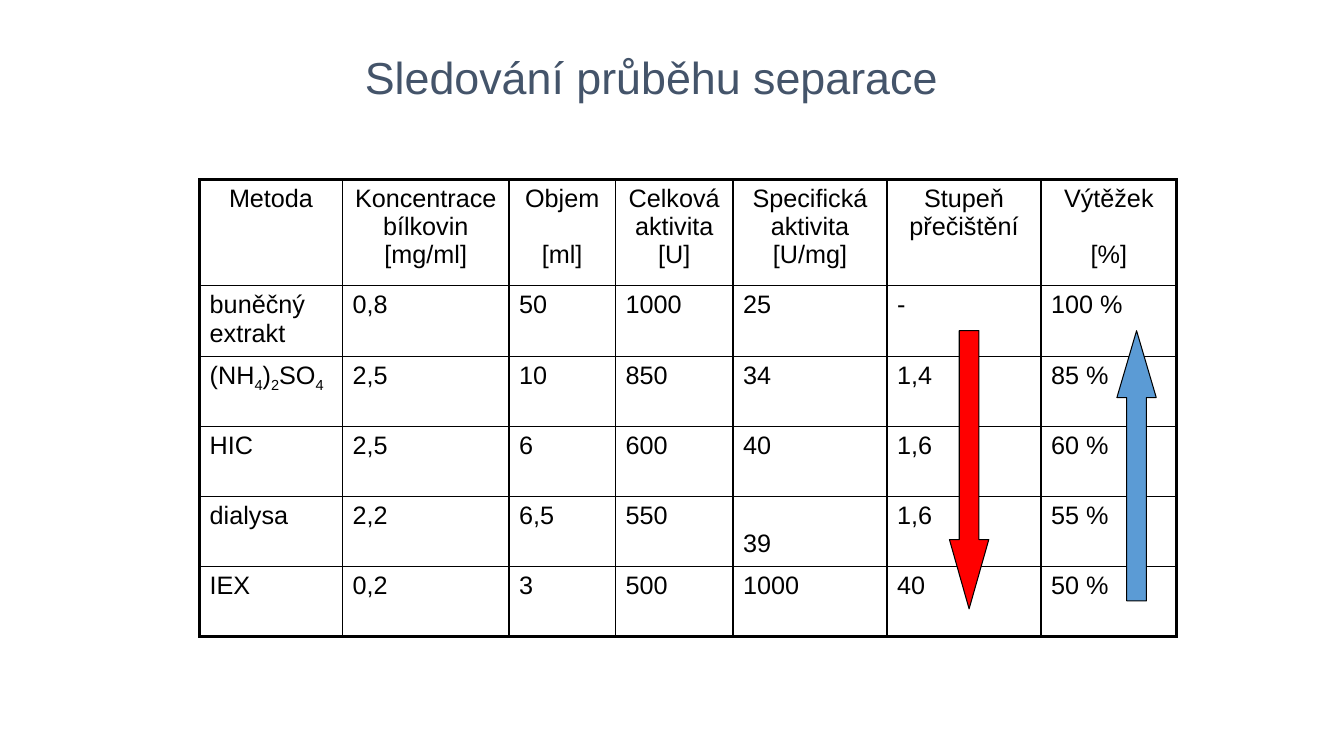
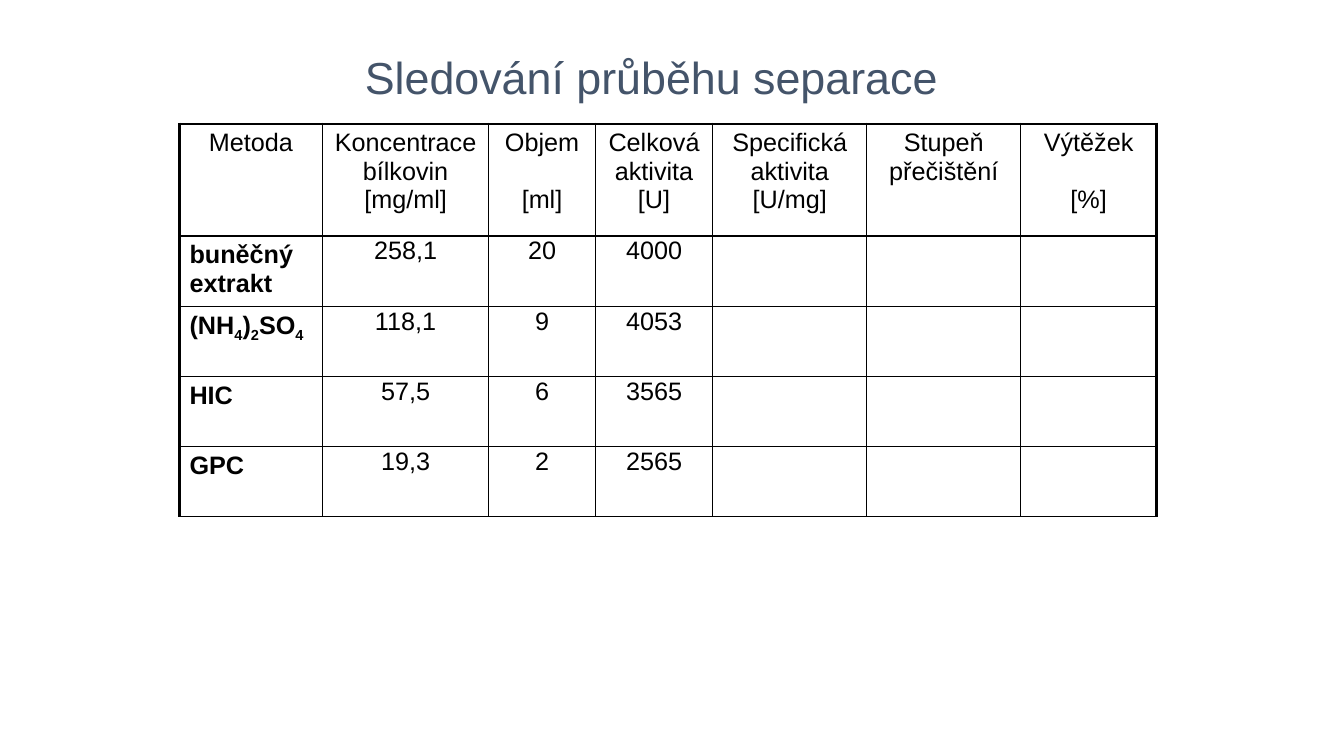
"""Builds two slides that follow a protein separation step by step."""
from dataclasses import dataclass

from lxml.etree import SubElement
from pptx import Presentation
from pptx.dml.color import RGBColor
from pptx.enum.shapes import MSO_SHAPE as Preset
from pptx.enum.text import MSO_ANCHOR as Anchor, MSO_AUTO_SIZE as AutoSize, PP_ALIGN as Align
from pptx.oxml.ns import qn
from pptx.slide import Slide
from pptx.table import _Cell as Cell
from pptx.util import Pt

BLACK = RGBColor(0x00, 0x00, 0x00)
WHITE = RGBColor(0xFF, 0xFF, 0xFF)
SLATE = RGBColor(0x44, 0x54, 0x6A)
BLUE = RGBColor(0x5B, 0x9B, 0xD5)
RED = RGBColor(0xFF, 0x00, 0x00)

FONT = "Arial"
TITLE = "Sledování průběhu separace"
THICK, THIN = 2.25, 1
LINE_HEIGHT = 20
ROW_HEIGHT = 50
COLUMN_WIDTHS = (102, 119, 76, 84, 110, 110, 97)
HEADER = (
    "Metoda",
    "Koncentrace\nbílkovin\n[mg/ml]",
    "Objem\n\n[ml]",
    "Celková aktivita\n[U]",
    "Specifická aktivita\n[U/mg]",
    "Stupeň přečištění",
    "Výtěžek\n\n[%]",
)
EXTRACT = "buněčný extrakt"
SULFATE = "(NH_4)_2SO_4"


@dataclass(frozen=True)
class CellStyle:
    """Alignment, weight and insets (left, top, right, bottom) of a cell."""
    align: Align = Align.LEFT
    bold: bool = False
    insets: tuple[float, ...] = (7.2, 3.6, 7.2, 3.6)


@dataclass(frozen=True)
class Grid:
    """One table of separation steps."""
    left: float
    top: float
    header_height: float
    rows: tuple[tuple[str, ...], ...]
    label: CellStyle
    value: CellStyle
    open_row: bool = False


@dataclass(frozen=True)
class Arrow:
    """A block arrow that shows a trend down a column."""
    preset: Preset
    left: float
    height: float
    head: float
    color: RGBColor


PLAIN = CellStyle()
CENTERED = CellStyle(Align.CENTER)
BOLD = CellStyle(bold=True)
TIGHT = CellStyle(Align.CENTER, insets=(0.7, 0.7, 0.7, 0))

RESULTS = Grid(142.6, 128.2, 76, (
    (EXTRACT, "0,8", "50", "1000", "25", "-", "100 %"),
    (SULFATE, "2,5", "10", "850", "34", "1,4", "85 %"),
    ("HIC", "2,5", "6", "600", "40", "1,6", "60 %"),
    ("dialysa", "2,2", "6,5", "550", "\n39", "1,6", "55 %"),
    ("IEX", "0,2", "3", "500", "1000", "40", "50 %"),
), PLAIN, PLAIN)
EXERCISE = Grid(128.2, 88.6, 80, (
    (EXTRACT, "258,1", "20", "4000"),
    (SULFATE, "118,1", "9", "4053"),
    ("HIC", "57,5", "6", "3565"),
    ("GPC", "19,3", "2", "2565"),
), BOLD, TIGHT, open_row=True)
ARROWS = (
    Arrow(Preset.UP_ARROW, 797.8, 193, 1.7, BLUE),
    Arrow(Preset.DOWN_ARROW, 678.2, 198.7, 1.76, RED),
)


def set_borders(cell: Cell, left: float, right: float, top: float, bottom: float) -> None:
    """Give a cell its four border widths, where zero means no line."""
    properties = cell._tc.get_or_add_tcPr()
    for place, (side, width) in enumerate(zip("LRTB", (left, right, top, bottom))):
        line = SubElement(properties, qn(f"a:ln{side}"), w=str(Pt(width)))
        if width:
            paint = SubElement(line, qn("a:solidFill"))
            SubElement(paint, qn("a:srgbClr"), val=str(BLACK))
        else:
            SubElement(line, qn("a:noFill"))
        properties.insert(place, line)


def write_cell(cell: Cell, text: str, style: CellStyle) -> None:
    """Write lines into a cell; an underscore lowers the next character."""
    left, top, right, bottom = style.insets
    frame = cell.text_frame
    para, gap = None, 0
    for line in text.split("\n"):
        if not line:
            gap += LINE_HEIGHT
            continue
        if para is None:
            para = frame.paragraphs[0]
            top += gap
        else:
            para = frame.add_paragraph()
            para.space_before = Pt(gap)
        gap = 0
        para.alignment = style.align
        para.font.name, para.font.size = FONT, Pt(18)
        para.font.bold = style.bold
        para.font.color.rgb = BLACK
        first, *lowered = line.split("_")
        para.add_run().text = first
        for piece in lowered:
            span = para.add_run()
            span.text = piece[0]
            span._r.get_or_add_rPr().set("baseline", "-25000")
            if piece[1:]:
                para.add_run().text = piece[1:]
    cell.margin_left, cell.margin_top = Pt(left), Pt(top)
    cell.margin_right, cell.margin_bottom = Pt(right), Pt(bottom)


def add_grid(page: Slide, grid: Grid) -> None:
    """Draw a table with a thick frame and thin inner lines."""
    filled = 1 + len(grid.rows)
    count = filled + grid.open_row
    last_column = len(COLUMN_WIDTHS) - 1
    height = grid.header_height + ROW_HEIGHT * (count - 1)
    table = page.shapes.add_table(
        count, len(COLUMN_WIDTHS), Pt(grid.left), Pt(grid.top),
        Pt(sum(COLUMN_WIDTHS)), Pt(height)).table
    table.first_row = table.horz_banding = False
    for column, width in zip(table.columns, COLUMN_WIDTHS):
        column.width = Pt(width)
    for index, row in enumerate(table.rows):
        row.height = Pt(ROW_HEIGHT if index else grid.header_height)
        for place, cell in enumerate(row.cells):
            cell.fill.background()
            if index == filled:
                set_borders(cell, 0, 0, THIN, 0)
                continue
            set_borders(
                cell,
                THIN if place else THICK,
                THICK if place == last_column else THIN,
                THIN if index else THICK,
                THICK if index == count - 1 else THIN)
    for index, texts in enumerate((HEADER, *grid.rows)):
        for place, text in enumerate(texts):
            body = grid.value if place else grid.label
            write_cell(table.cell(index, place), text, body if index else CENTERED)
    if grid.open_row:
        table.cell(filled, 0).merge(table.cell(filled, last_column))


def add_arrow(page: Slide, arrow: Arrow) -> None:
    """Draw one block arrow."""
    shape = page.shapes.add_shape(
        arrow.preset, Pt(arrow.left), Pt(236.2), Pt(28.1), Pt(arrow.height))
    shape.shadow.inherit = False
    shape.adjustments[0], shape.adjustments[1] = 0.5, arrow.head
    shape.fill.solid()
    shape.fill.fore_color.rgb = arrow.color
    shape.line.color.rgb = BLACK
    shape.line.width = Pt(0.75)


def add_page(deck: Presentation, grid: Grid, arrows: tuple[Arrow, ...] = ()) -> None:
    """Add a titled slide with its table and arrows."""
    page = deck.slides.add_slide(deck.slide_layouts.get_by_name("Title Only"))
    page.background.fill.solid()
    page.background.fill.fore_color.rgb = WHITE
    box = page.shapes.title
    box.left, box.top, box.width, box.height = Pt(253.4), Pt(31.7), Pt(427), Pt(46)
    frame = box.text_frame
    frame.text = TITLE
    frame.word_wrap = False
    frame.auto_size = AutoSize.SHAPE_TO_FIT_TEXT
    frame.vertical_anchor = Anchor.TOP
    para = frame.paragraphs[0]
    para.alignment = Align.LEFT
    para.font.name, para.font.size = FONT, Pt(32)
    para.font.color.rgb = SLATE
    add_grid(page, grid)
    for arrow in arrows:
        add_arrow(page, arrow)


def main() -> None:
    """Build and save the deck."""
    deck = Presentation()
    deck.slide_width, deck.slide_height = Pt(960), Pt(540)
    add_page(deck, RESULTS, ARROWS)
    add_page(deck, EXERCISE)
    deck.save("out.pptx")


if __name__ == "__main__":
    main()
